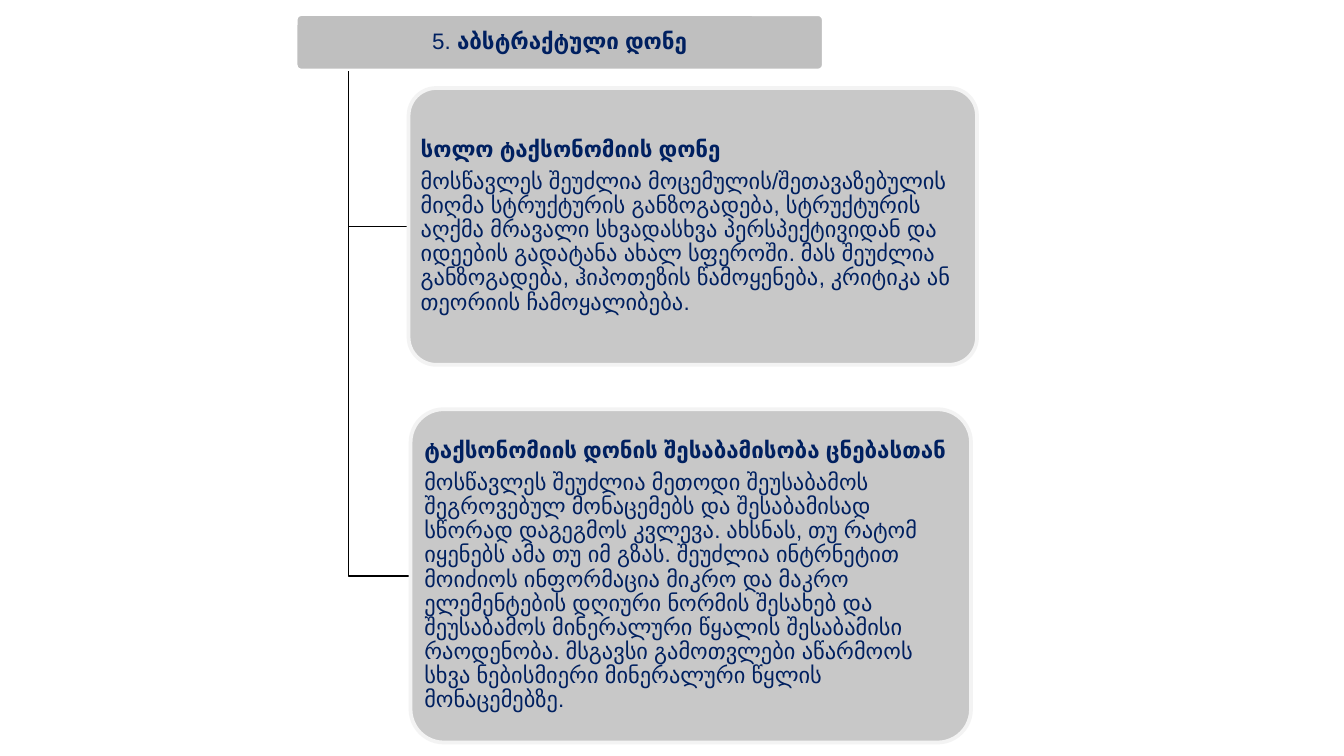
from pptx import Presentation
from pptx import util as u
from pptx.dml.color import RGBColor
from pptx.enum import shapes, text
from pptx.oxml.ns import qn
from lxml import etree

# Content
HEADER = ("5. ", "აბსტრაქტული დონე")
LEVELS = [
    ("სოლო ტაქსონომიის დონე",
     "მოსწავლეს შეუძლია მოცემულის/შეთავაზებულის მიღმა სტრუქტურის განზოგადება, "
     "სტრუქტურის აღქმა მრავალი სხვადასხვა პერსპექტივიდან და იდეების გადატანა ახალ "
     "სფეროში. მას შეუძლია განზოგადება, ჰიპოთეზის წამოყენება, კრიტიკა ან თეორიის "
     "ჩამოყალიბება."),
    ("ტაქსონომიის დონის შესაბამისობა ცნებასთან",
     "მოსწავლეს შეუძლია მეთოდი შეუსაბამოს შეგროვებულ მონაცემებს და შესაბამისად "
     "სწორად დაგეგმოს კვლევა. ახსნას, თუ რატომ იყენებს ამა თუ იმ გზას. შეუძლია "
     "ინტრნეტით მოიძიოს ინფორმაცია მიკრო და მაკრო ელემენტების დღიური ნორმის შესახებ "
     "და შეუსაბამოს მინერალური წყალის შესაბამისი რაოდენობა. მსგავსი გამოთვლები "
     "აწარმოოს სხვა ნებისმიერი მინერალური წყლის მონაცემებზე."),
]

# Layout in px, 200 to the inch: left, top, width, height
PX = 4572
SLIDE = (2000, 1125)
HEADER_BOX = (440, 21, 786, 84)
LEVEL_BOXES = [(608, 131, 846, 412), (611, 609, 834, 496)]
TRUNK_X, TRUNK_TOP = 519, 106

THEME = {
    "font": "Arial", "size": 12, "after": 4.2, "spacing": 0.9,
    "text": "002060", "header": "BFBFBF", "header_line": "FFFFFF",
    "level": "C3C3C3", "level_line": "F3F3F3", "trunk": "000000",
    "box_width": 2, "trunk_width": 0.75, "level_opacity": 90,
}


def color(name):
    return RGBColor.from_string(THEME[name])


def set_line(s, name, width):
    s.line.color.rgb = color(name)
    s.line.width = u.Pt(THEME[width])
    s.shadow.inherit = False


def add_box(sp, box, name, paragraphs, align, opacity=100):
    """Rounded box; paragraphs hold lists of (text, bold) runs."""
    s = sp.add_shape(shapes.MSO_SHAPE.ROUNDED_RECTANGLE, *(v * PX for v in box))
    s.adjustments[0] = 0.1
    s.fill.solid()
    s.fill.fore_color.rgb = color(name)
    if opacity < 100:
        fill = s._element.spPr.find(qn("a:solidFill"))[0]
        etree.SubElement(fill, qn("a:alpha")).set("val", str(opacity * 1000))
    set_line(s, name + "_line", "box_width")

    tf = s.text_frame
    tf.word_wrap = True
    tf.vertical_anchor = text.MSO_ANCHOR.MIDDLE
    tf.margin_left = tf.margin_right = 6 * PX
    tf.margin_top = tf.margin_bottom = 4 * PX
    for i, runs in enumerate(paragraphs):
        p = tf.add_paragraph() if i else tf.paragraphs[0]
        p.alignment = align
        p.line_spacing = THEME["spacing"]
        p.space_after = u.Pt(THEME["after"])
        for words, bold in runs:
            r = p.add_run()
            r.text = words
            r.font.name = THEME["font"]
            r.font.size = u.Pt(THEME["size"])
            r.font.bold = bold
            r.font.color.rgb = color("text")


def add_branch(sp, box):
    """Line down from the header, then across to the box's left middle."""
    left, top, _, height = box
    middle = top + height // 2
    path = sp.build_freeform(TRUNK_X, TRUNK_TOP, scale=PX)
    path.add_line_segments([(TRUNK_X, middle), (left, middle)], close=False)
    s = path.convert_to_shape()
    s.fill.background()
    set_line(s, "trunk", "trunk_width")


prs = Presentation()
prs.slide_width, prs.slide_height = (v * PX for v in SLIDE)
sp = prs.slides.add_slide(prs.slide_layouts[6]).shapes

# Header
number, title = HEADER
add_box(sp, HEADER_BOX, "header", [[(number, False), (title, True)]],
        text.PP_ALIGN.CENTER)

# Levels with their branches
for box, (heading, body) in zip(LEVEL_BOXES, LEVELS):
    add_branch(sp, box)
    add_box(sp, box, "level", [[(heading, True)], [(body, False)]],
            text.PP_ALIGN.LEFT, THEME["level_opacity"])

prs.save("out.pptx")
